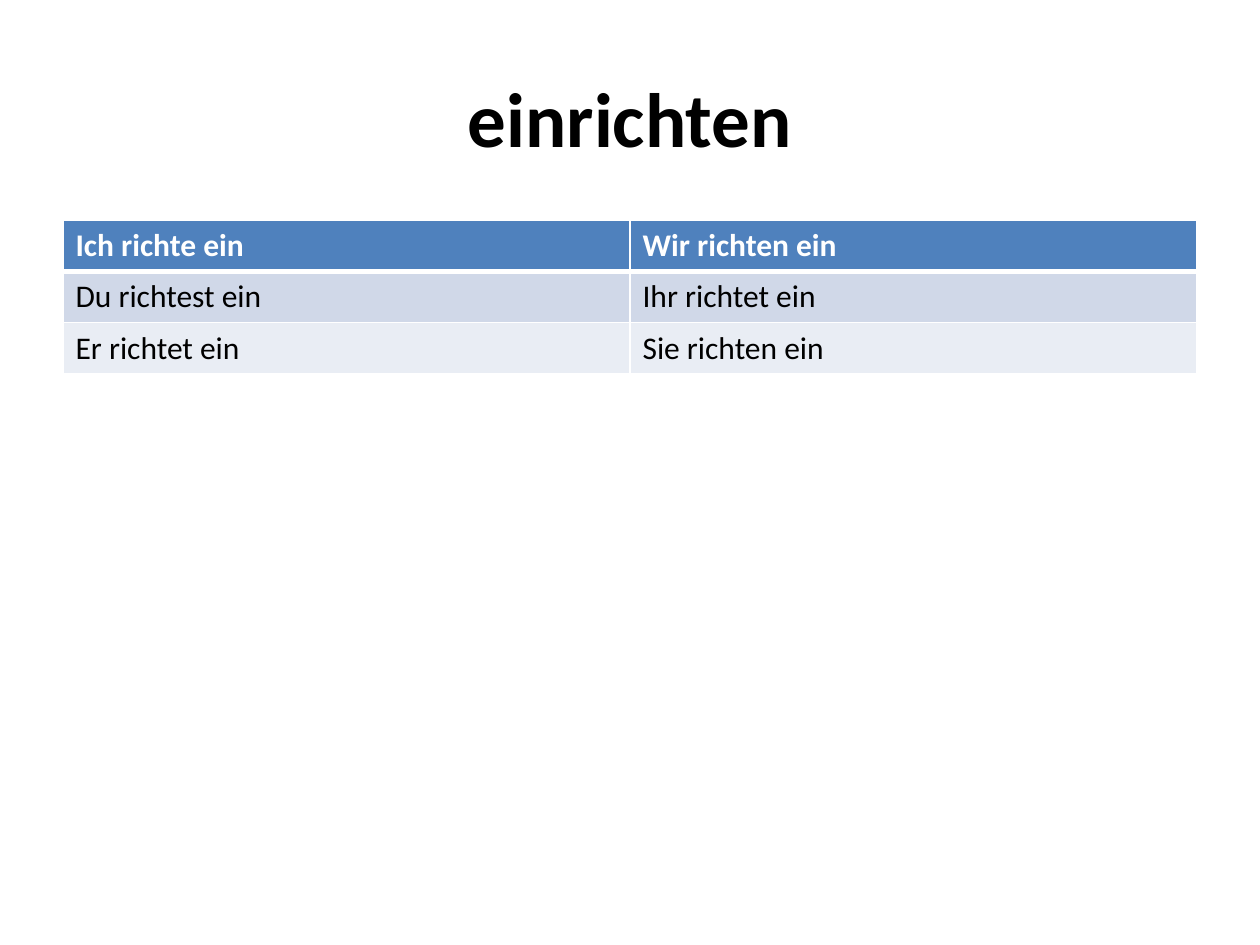
from dataclasses import dataclass

from lxml import etree
from pptx import Presentation
from pptx.dml.color import RGBColor
from pptx.enum.text import MSO_ANCHOR, PP_ALIGN
from pptx.oxml.ns import qn
from pptx.util import Inches, Pt

CENTER = PP_ALIGN.CENTER
MIDDLE = MSO_ANCHOR.MIDDLE
TITLE_ONLY = 5


@dataclass(frozen=True)
class Theme:
    font: str = "Calibri"
    title_size: int = 44
    table_size: int = 18
    dark: str = "000000"
    light: str = "FFFFFF"
    header: str = "4F81BD"
    bands: tuple = ("D0D8E8", "E9EDF4")
    border: int = 1
    header_border: int = 3


THEME = Theme()
WIDTH, HEIGHT = Inches(10), Inches(7.5)
MARGIN = 0.05  # share of the slide width
TITLE_BOX = (MARGIN, 0.04, 1 - 2 * MARGIN, 1 / 6)
TABLE_BOX = (MARGIN, 7 / 30, 1 - 2 * MARGIN, 0.162)
CONJUGATION = [
    ("Ich richte ein", "Wir richten ein"),
    ("Du richtest ein", "Ihr richtet ein"),
    ("Er richtet ein", "Sie richten ein"),
]


def to_slide(box):
    """Turn shares of the slide into lengths."""
    return [round(share * side) for share, side in zip(box, (WIDTH, HEIGHT) * 2)]


def format_font(font, color, **values):
    for name, value in values.items():
        setattr(font, name, value)
    font.color.rgb = RGBColor.from_string(color)


def set_borders(cell, widths):
    """Draw cell borders; the line elements must come before the fill."""
    properties = cell._tc.get_or_add_tcPr()
    for position, (side, width) in enumerate(widths.items()):
        line = etree.Element(qn(f"a:ln{side}"), w=str(Pt(width)))
        fill = etree.SubElement(line, qn("a:solidFill"))
        etree.SubElement(fill, qn("a:srgbClr"), val=THEME.light)
        properties.insert(position, line)


def add_title(slide, box, text):
    title = slide.shapes.title
    title.left, title.top, title.width, title.height = to_slide(box)
    frame = title.text_frame
    frame.text = text
    frame.vertical_anchor = MIDDLE
    paragraph = frame.paragraphs[0]
    paragraph.alignment = CENTER
    format_font(paragraph.runs[0].font, THEME.dark, name=THEME.font,
                size=Pt(THEME.title_size), bold=True)


def add_conjugation_table(slide, box, rows):
    shape = slide.shapes.add_table(len(rows), len(rows[0]), *to_slide(box))
    for row_index, row in enumerate(rows):
        is_header = row_index == 0
        fill = THEME.header if is_header else THEME.bands[(row_index - 1) % 2]
        borders = dict.fromkeys("LRTB", THEME.border)
        if is_header:
            borders["B"] = THEME.header_border
        elif row_index == 1:
            borders["T"] = THEME.header_border
        for column_index, text in enumerate(row):
            cell = shape.table.cell(row_index, column_index)
            cell.text = text
            cell.fill.solid()
            cell.fill.fore_color.rgb = RGBColor.from_string(fill)
            set_borders(cell, borders)
            format_font(cell.text_frame.paragraphs[0].runs[0].font,
                        THEME.light if is_header else THEME.dark,
                        name=THEME.font, size=Pt(THEME.table_size), bold=is_header)


def main():
    presentation = Presentation()
    presentation.slide_width, presentation.slide_height = WIDTH, HEIGHT
    slide = presentation.slides.add_slide(presentation.slide_layouts[TITLE_ONLY])
    add_title(slide, TITLE_BOX, "einrichten")
    add_conjugation_table(slide, TABLE_BOX, CONJUGATION)
    presentation.save("out.pptx")


if __name__ == "__main__":
    main()
